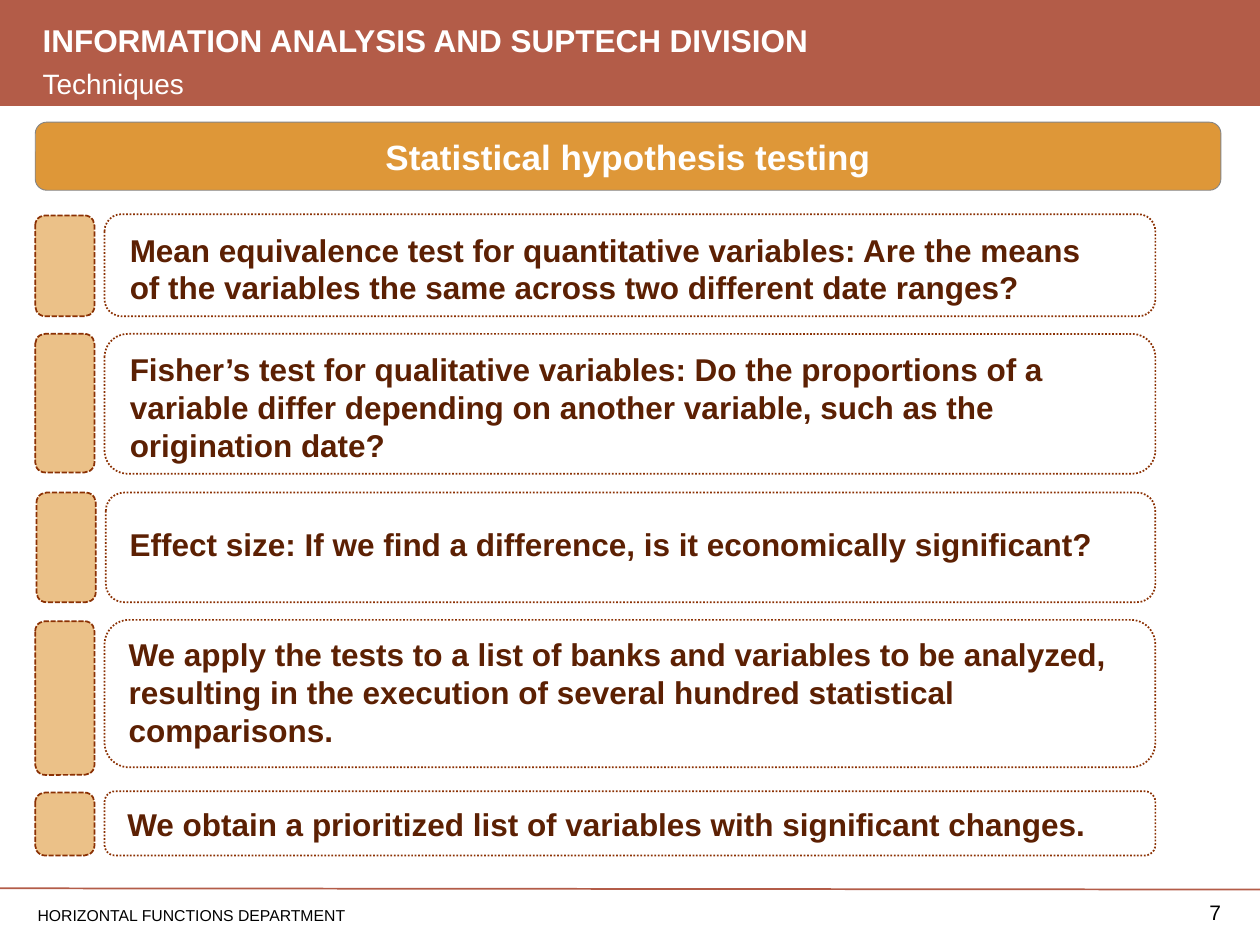
from lxml import etree
from pptx import Presentation
from pptx import util as u
from pptx.dml.color import RGBColor
from pptx.enum import dml, shapes, text
from pptx.oxml.ns import qn

COLORS = {
    "brick": "B35C48", "banner": "DE9738", "banner_edge": "858585",
    "marker": "EBC188", "edge": "8B3104", "statement": "5C2003",
    "white": "FFFFFF", "black": "000000",
}
COLUMNS, ROWS = 100, 75  # square grid cells of a tenth of an inch

presentation = Presentation()
presentation.slide_width, presentation.slide_height = u.Inches(10), u.Inches(7.5)
slide = presentation.slides.add_slide(presentation.slide_layouts[6])
column = presentation.slide_width / COLUMNS
row = presentation.slide_height / ROWS


def add_block(kind, left, top, width, height, fill=None, edge=None, weight=1, dash=None):
    """Add a preset shape measured in grid columns and rows."""
    shape = slide.shapes.add_shape(
        kind, int(left * column), int(top * row), int(width * column), int(height * row))
    shape.shadow.inherit = False
    if fill:
        shape.fill.solid()
        shape.fill.fore_color.rgb = RGBColor.from_string(COLORS[fill])
    else:
        shape.fill.background()
    if edge:
        shape.line.color.rgb = RGBColor.from_string(COLORS[edge])
        shape.line.width = u.Pt(weight)
        if dash:
            shape.line.dash_style = dash
    else:
        shape.line.fill.background()
    return shape


def write(words, box=None, shape=None, size=18, color="white", bold=False,
          align=text.PP_ALIGN.LEFT, anchor=text.MSO_ANCHOR.TOP, insets=(1, 0.5, 1, 0.5)):
    """Write into a shape, or into a new text box given as left, top, width, height."""
    if shape is None:
        left, top, width, height = box
        shape = slide.shapes.add_textbox(
            int(left * column), int(top * row), int(width * column), int(height * row))
    frame = shape.text_frame
    frame.word_wrap = True
    frame.vertical_anchor = anchor
    frame.margin_left, frame.margin_right = int(insets[0] * column), int(insets[2] * column)
    frame.margin_top, frame.margin_bottom = int(insets[1] * row), int(insets[3] * row)
    paragraph = frame.paragraphs[0]
    paragraph.alignment = align
    run = paragraph.add_run()
    run.text = words
    run.font.name, run.font.size, run.font.bold = "Arial", u.Pt(size), bold
    run.font.color.rgb = RGBColor.from_string(COLORS[color])


# Header
add_block(shapes.MSO_SHAPE.RECTANGLE, 0, 0, COLUMNS, 8.4, fill="brick")
write("INFORMATION ANALYSIS AND SUPTECH DIVISION", box=(2.4, 1.2, 69.7, 3.1), bold=True)
write("Techniques", box=(2.4, 4.75, 69.7, 3.1), size=16)

# Footer
footer_line = slide.shapes.add_connector(
    shapes.MSO_CONNECTOR.STRAIGHT, 0, int(70.5 * row), int(COLUMNS * column), int(70.6 * row))
footer_line.line.color.rgb = RGBColor.from_string(COLORS["brick"])
footer_line.line.width = u.Pt(1)
etree.SubElement(footer_line._element.spPr, qn("a:effectLst"))
write("HORIZONTAL FUNCTIONS DEPARTMENT", box=(2, 71.4, 58.6, 2.8), size=9, color="black")
write("7", box=(91.7, 70.9, 5.2, 3.3), size=12, color="black",
      align=text.PP_ALIGN.RIGHT, insets=(1, 0.5, 0, 0.5))

# Banner
banner = add_block(shapes.MSO_SHAPE.ROUNDED_RECTANGLE, 2.8, 9.7, 94.1, 5.4,
                   fill="banner", edge="banner_edge", weight=0.5)
write("Statistical hypothesis testing", shape=banner, size=20, bold=True,
      align=text.PP_ALIGN.CENTER, anchor=text.MSO_ANCHOR.MIDDLE)

# Statements: words, left shift, panel top and height, marker top and height,
# text left, top, width and height
statements = [
    ("Mean equivalence test for quantitative variables: Are the means of the variables "
     "the same across two different date ranges?",
     0, (17, 8.1), (17.1, 8), (9.6, 17.9, 79.9, 3.6)),
    ("Fisher’s test for qualitative variables: Do the proportions of a variable differ "
     "depending on another variable, such as the origination date?",
     0, (26.5, 11.1), (26.5, 11), (9.6, 27.4, 79.9, 9.1)),
    ("Effect size: If we find a difference, is it economically significant?",
     0.1, (39.1, 8.7), (39.1, 8.7), (9.6, 41.3, 81.3, 4.2)),
    ("We apply the tests to a list of banks and variables to be analyzed, resulting in "
     "the execution of several hundred statistical comparisons.",
     0, (49.2, 11.7), (49.3, 12.2), (9.5, 50, 82.1, 7)),
    ("We obtain a prioritized list of variables with significant changes.",
     0, (62.8, 5.1), (62.9, 5), (9.4, 63.5, 82.2, 5.1)),
]
for words, shift, (panel_top, panel_height), (marker_top, marker_height), box in statements:
    add_block(shapes.MSO_SHAPE.ROUNDED_RECTANGLE, 8.3 + shift, panel_top, 83.4 - shift,
              panel_height, edge="edge", dash=dml.MSO_LINE.ROUND_DOT)
    add_block(shapes.MSO_SHAPE.ROUNDED_RECTANGLE, 2.8 + shift, marker_top, 4.7,
              marker_height, fill="marker", edge="edge", dash=dml.MSO_LINE.SQUARE_DOT)
    write(words, box=box, color="statement", bold=True, insets=(0.7, 0.4, 0.7, 0.4))

# The preset dash names differ from the short system dashes used on this slide
system_dashes = {"sysDot": "sysDash", "dot": "sysDot"}
for dash in slide.shapes._spTree.iter(qn("a:prstDash")):
    is_marker = dash.getparent().getparent().find(qn("a:solidFill")) is not None
    dash.set("val", system_dashes["sysDot" if is_marker else "dot"])

presentation.save("out.pptx")
